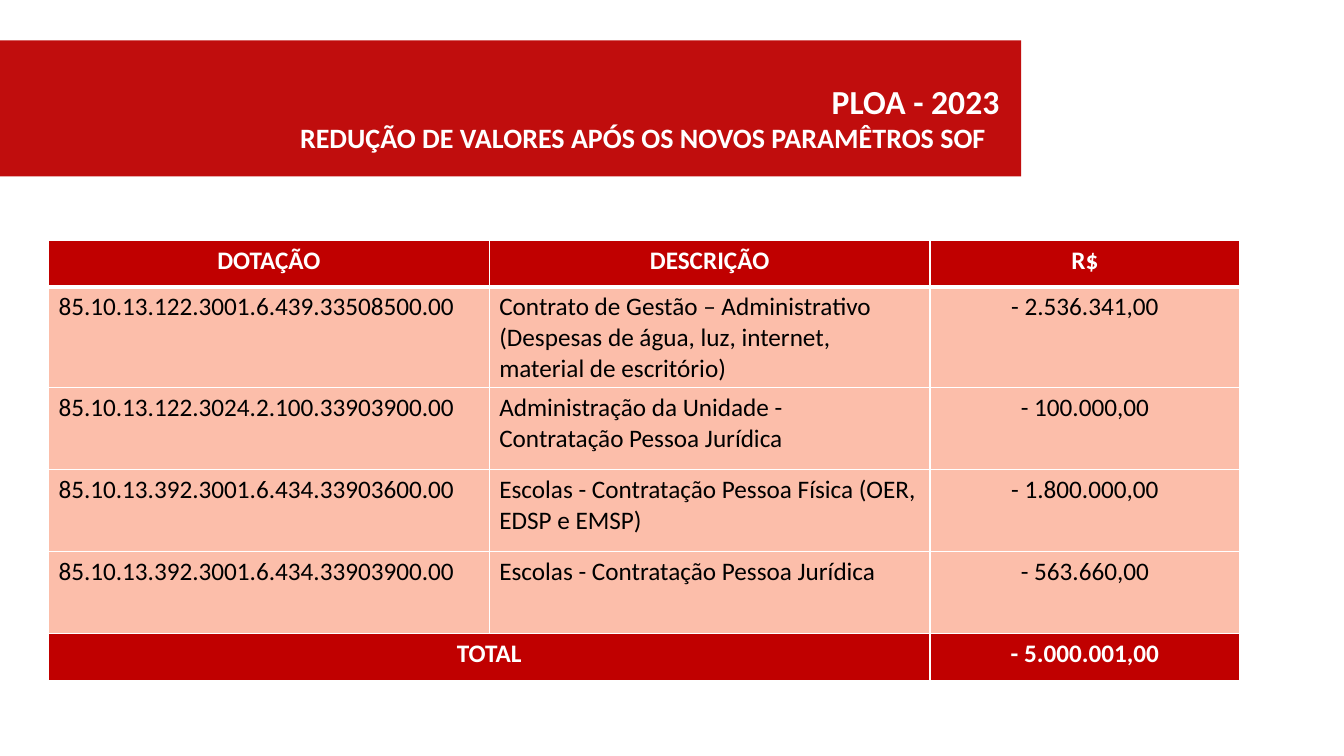
from dataclasses import dataclass

from lxml import etree
from pptx import Presentation
from pptx.dml.color import RGBColor
from pptx.enum.shapes import MSO_SHAPE
from pptx.enum.text import MSO_ANCHOR, PP_ALIGN
from pptx.oxml.ns import qn
from pptx.util import Pt

RECTANGLE = MSO_SHAPE.RECTANGLE
MIDDLE = MSO_ANCHOR.MIDDLE
LEFT, CENTER, RIGHT = PP_ALIGN.LEFT, PP_ALIGN.CENTER, PP_ALIGN.RIGHT


@dataclass(frozen=True)
class Theme:
    font: str = "Calibri"
    banner: str = "C00D0D"
    accent: str = "C00000"
    body_fill: str = "FCBEAA"
    light: str = "FFFFFF"
    dark: str = "000000"
    title_size: int = 24
    subtitle_size: int = 20
    table_size: int = 18
    thin_border: int = 1
    header_border: int = 3


THEME = Theme()

HEADERS = ["DOTAÇÃO", "DESCRIÇÃO", "R$"]
BUDGET_LINES = [
    ["85.10.13.122.3001.6.439.33508500.00",
     "Contrato de Gestão – Administrativo (Despesas de água, luz, internet, material de escritório)",
     "- 2.536.341,00"],
    ["85.10.13.122.3024.2.100.33903900.00",
     "Administração da Unidade -\nContratação Pessoa Jurídica",
     "- 100.000,00"],
    ["85.10.13.392.3001.6.434.33903600.00",
     "Escolas - Contratação Pessoa Física (OER, EDSP e EMSP)",
     "- 1.800.000,00"],
    ["85.10.13.392.3001.6.434.33903900.00",
     "Escolas - Contratação Pessoa Jurídica",
     "- 563.660,00"],
]
TOTAL = ["TOTAL", "", "- 5.000.001,00"]


def write_paragraph(paragraph, text, size, color, bold, alignment):
    paragraph.alignment = alignment
    run = paragraph.add_run()
    run.text = text
    run.font.name = THEME.font
    run.font.size = Pt(size)
    run.font.bold = bold
    run.font.color.rgb = RGBColor.from_string(color)


def add_banner(slide, left, top, width, height):
    banner = slide.shapes.add_shape(RECTANGLE, Pt(left), Pt(top), Pt(width), Pt(height))
    banner.shadow.inherit = False
    banner.fill.solid()
    banner.fill.fore_color.rgb = RGBColor.from_string(THEME.banner)
    banner.line.fill.background()

    title = slide.shapes.add_textbox(
        Pt(left + 34.5), Pt(top + 13), Pt(width - 43), Pt(height - 13))
    frame = title.text_frame
    frame.word_wrap = True
    frame.vertical_anchor = MIDDLE
    write_paragraph(frame.paragraphs[0], "PLOA - 2023",
                    THEME.title_size, THEME.light, True, RIGHT)
    subtitle = frame.add_paragraph()
    write_paragraph(subtitle, "REDUÇÃO DE VALORES APÓS OS NOVOS PARAMÊTROS SOF",
                    THEME.subtitle_size, THEME.light, True, RIGHT)
    subtitle._p.get_or_add_pPr().set("marR", str(Pt(9.5)))


def add_borders(cell, bottom_width):
    properties = cell._tc.get_or_add_tcPr()
    thin = THEME.thin_border
    for side, width in (("L", thin), ("R", thin), ("T", thin), ("B", bottom_width)):
        line = etree.SubElement(properties, qn(f"a:ln{side}"), w=str(Pt(width)))
        fill = etree.SubElement(line, qn("a:solidFill"))
        etree.SubElement(fill, qn("a:srgbClr"), val=THEME.light)


def fill_cell(cell, text, emphasized, alignment, bottom_width):
    add_borders(cell, bottom_width)
    cell.fill.solid()
    cell.fill.fore_color.rgb = RGBColor.from_string(
        THEME.accent if emphasized else THEME.body_fill)
    if not text:
        return
    frame = cell.text_frame
    for index, line in enumerate(text.split("\n")):
        paragraph = frame.add_paragraph() if index else frame.paragraphs[0]
        write_paragraph(paragraph, line, THEME.table_size,
                        THEME.light if emphasized else THEME.dark, emphasized, alignment)


def add_budget_table(slide, left, top, width, height):
    rows = [HEADERS, *BUDGET_LINES, TOTAL]
    last = len(rows) - 1
    table = slide.shapes.add_table(
        len(rows), len(HEADERS), Pt(left), Pt(top), Pt(width), Pt(height)).table
    for column, share in zip(table.columns, (0.37, 0.37, 0.26)):
        column.width = Pt(width * share)
    for row_index, texts in enumerate(rows):
        emphasized = row_index in (0, last)
        table.rows[row_index].height = Pt(33.5 if emphasized else 58.5)
        bottom_width = THEME.thin_border if row_index else THEME.header_border
        for column_index, text in enumerate(texts):
            alignment = CENTER if emphasized or column_index == 2 else LEFT
            fill_cell(table.cell(row_index, column_index), text,
                      emphasized, alignment, bottom_width)
    table.cell(last, 0).merge(table.cell(last, 1))


def main():
    presentation = Presentation()
    presentation.slide_width = Pt(960)
    presentation.slide_height = Pt(540)
    slide = presentation.slides.add_slide(presentation.slide_layouts[6])
    add_banner(slide, 0, 28.8, 729.4, 97.2)
    add_budget_table(slide, 34.6, 171.4, 851, 313)
    presentation.save("out.pptx")


if __name__ == "__main__":
    main()
